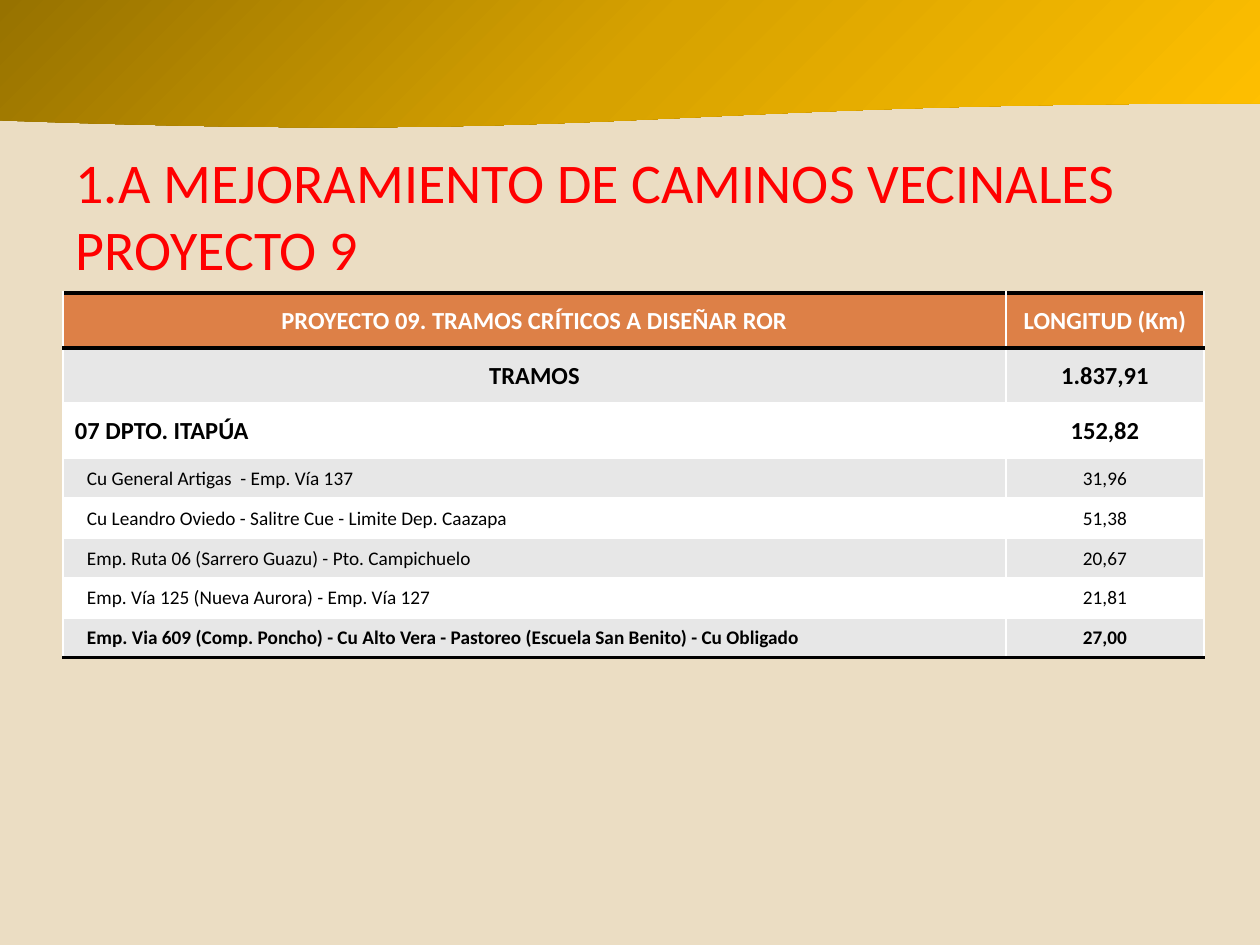
from copy import deepcopy

from lxml.etree import SubElement
from pptx import Presentation
from pptx.dml.color import RGBColor
from pptx.enum.shapes import MSO_SHAPE
from pptx.enum.text import MSO_ANCHOR, PP_ALIGN
from pptx.oxml.ns import qn
from pptx.util import Pt

FONT = "Calibri"
COLORS = {
    "background": "EBDDC3", "title": "FF0000", "header": "DD8047",
    "header_text": "FFFFFF", "text": "000000", "rule": "000000",
    "band": "E7E7E7", "plain": "FFFFFF",
}
BANNER_STOPS = [(0, "977200"), (0.5, "D7A200"), (1, "FFC000")]
TITLE_LINES = ["1.A MEJORAMIENTO DE CAMINOS VECINALES ", "PROYECTO 9"]

# section, kilometres, style
SECTIONS = [
    ("PROYECTO 09. TRAMOS CRÍTICOS A DISEÑAR ROR", "LONGITUD (Km)", "heading"),
    ("TRAMOS", "1.837,91", "heading"),
    ("07 DPTO. ITAPÚA", "152,82", "department"),
    ("Cu General Artigas  - Emp. Vía 137", "31,96", "road"),
    ("Cu Leandro Oviedo - Salitre Cue - Limite Dep. Caazapa", "51,38", "road"),
    ("Emp. Ruta 06 (Sarrero Guazu) - Pto. Campichuelo", "20,67", "road"),
    ("Emp. Vía 125 (Nueva Aurora) - Emp. Vía 127", "21,81", "road"),
    ("Emp. Via 609 (Comp. Poncho) - Cu Alto Vera - Pastoreo (Escuela San Benito) - Cu Obligado",
     "27,00", "key road"),
]
# row height px, text size, bold, alignment of the section, left margin px
STYLES = {
    "heading": (55, 14, True, PP_ALIGN.CENTER, 1),
    "department": (55, 14, True, PP_ALIGN.LEFT, 12),
    "road": (40, 11, False, PP_ALIGN.LEFT, 24),
    "key road": (40, 11, True, PP_ALIGN.LEFT, 24),
}
COLUMN_WIDTHS = [943, 198]


def px(count):
    return round(count * 914400 / 126)


def color(name):
    return RGBColor.from_string(COLORS[name])


def add_run(paragraph, words, size, ink, bold=False):
    run = paragraph.add_run()
    run.text = words
    run.font.name, run.font.size, run.font.bold = FONT, Pt(size), bold
    run.font.color.rgb = color(ink)


def add_rules(cell, sides):
    """Draw 2 pt rules on the given cell sides, T before B."""
    properties = cell._tc.get_or_add_tcPr()
    for place, side in enumerate(sides):
        line = SubElement(properties, qn(f"a:ln{side}"), w=str(Pt(2)))
        fill = SubElement(line, qn("a:solidFill"))
        SubElement(fill, qn("a:srgbClr"), val=COLORS["rule"])
        properties.insert(place, line)


def add_banner(slide):
    banner = slide.shapes.add_shape(
        MSO_SHAPE.FLOWCHART_DOCUMENT, 0, 0, px(1260), px(129))
    banner.shadow.inherit = False
    banner.line.fill.background()
    banner.fill.gradient()
    banner.fill.gradient_angle = 315
    first_stop = banner._element.spPr.find(".//" + qn("a:gs"))
    first_stop.addnext(deepcopy(first_stop))
    for stop, (position, shade) in zip(banner.fill.gradient_stops, BANNER_STOPS):
        stop.position = position
        stop.color.rgb = RGBColor.from_string(shade)


def add_title(slide):
    title = slide.shapes.title
    title.left, title.top, title.width, title.height = map(px, (63, 136, 1134, 158))
    title.text_frame.vertical_anchor = MSO_ANCHOR.MIDDLE
    paragraph = title.text_frame.paragraphs[0]
    paragraph.alignment = PP_ALIGN.LEFT
    for number, line in enumerate(TITLE_LINES):
        if number:
            paragraph.add_line_break()
        add_run(paragraph, line, 32, "title")


def add_sections(slide):
    heights = [STYLES[style][0] for *_, style in SECTIONS]
    table = slide.shapes.add_table(
        len(SECTIONS), len(COLUMN_WIDTHS), px(63), px(293),
        px(sum(COLUMN_WIDTHS)), px(sum(heights))).table
    for column, width in zip(table.columns, COLUMN_WIDTHS):
        column.width = px(width)
    last = len(SECTIONS) - 1
    for number, (section, length, style) in enumerate(SECTIONS):
        height, size, bold, alignment, margin = STYLES[style]
        table.rows[number].height = px(height)
        fill = "header" if number == 0 else "band" if number % 2 else "plain"
        ink = "text" if number else "header_text"
        sides = "TB" if number == 0 else "B" if number == last else ""
        parts = [(section, alignment, margin), (length, PP_ALIGN.CENTER, 1)]
        for cell, (words, align, left) in zip(table.rows[number].cells, parts):
            cell.fill.solid()
            cell.fill.fore_color.rgb = color(fill)
            cell.vertical_anchor = MSO_ANCHOR.MIDDLE
            cell.margin_left = px(left)
            cell.margin_top = cell.margin_right = px(1)
            cell.margin_bottom = 0
            paragraph = cell.text_frame.paragraphs[0]
            paragraph.alignment = align
            add_run(paragraph, words, size, ink, bold)
            add_rules(cell, sides)


def main():
    presentation = Presentation()
    presentation.slide_width, presentation.slide_height = px(1260), px(945)
    slide = presentation.slides.add_slide(presentation.slide_layouts[5])
    slide.background.fill.solid()
    slide.background.fill.fore_color.rgb = color("background")
    add_banner(slide)
    add_title(slide)
    add_sections(slide)
    presentation.save("out.pptx")


if __name__ == "__main__":
    main()
